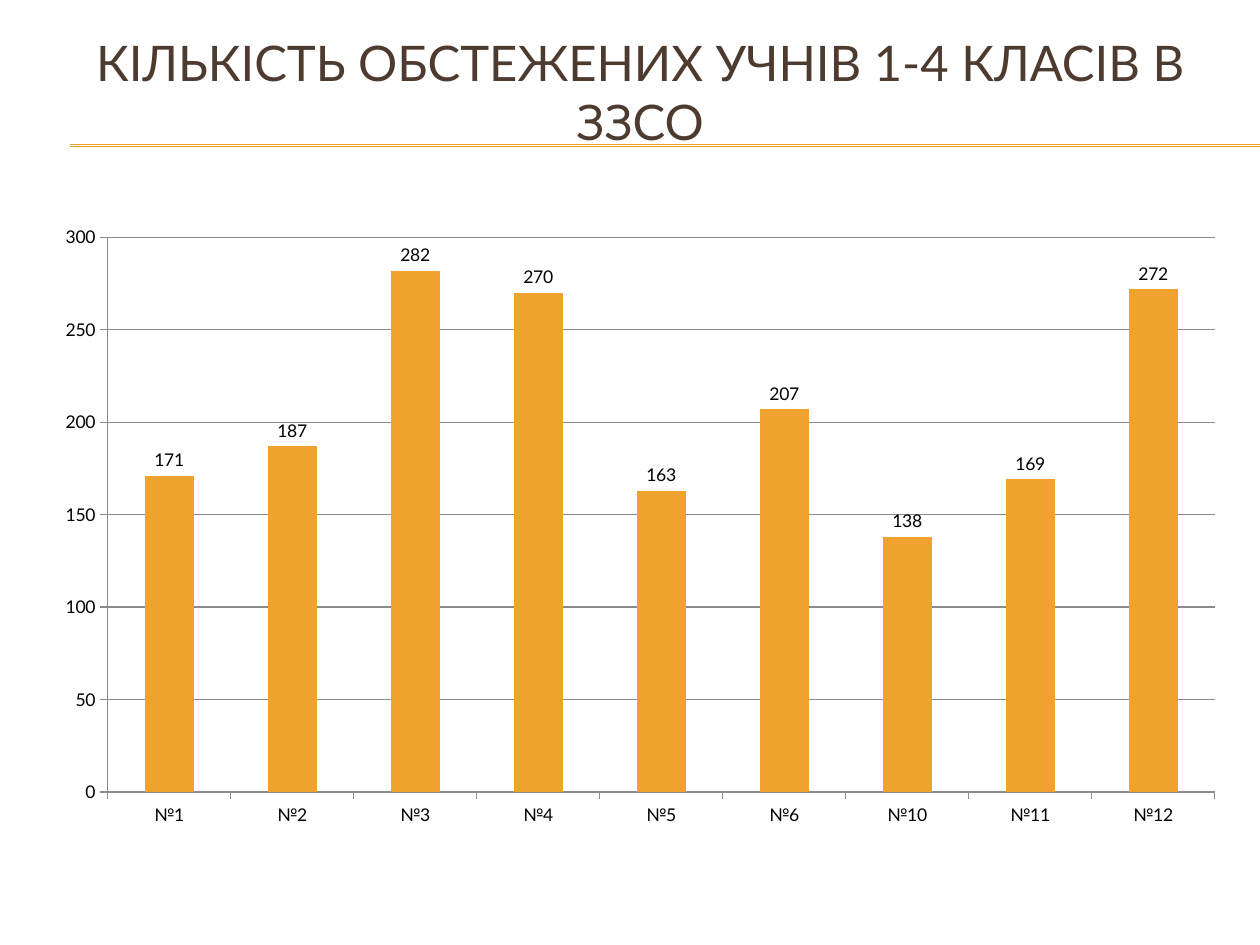
from dataclasses import dataclass
from lxml.etree import SubElement
from pptx import Presentation
from pptx.chart.data import CategoryChartData
from pptx.dml.color import RGBColor
from pptx.enum.chart import XL_CHART_TYPE, XL_LABEL_POSITION, XL_TICK_MARK
from pptx.enum.shapes import MSO_CONNECTOR
from pptx.enum.text import MSO_ANCHOR, PP_ALIGN
from pptx.oxml.ns import qn
from pptx.slide import Slide
from pptx.util import Cm, Pt

FONT = "Lato"
GOLD = "F0A22E"
BROWN = "4E3B30"
GREY = "8B8B8B"
BLACK = "000000"


@dataclass(frozen=True)
class School:
    """A school and its number of examined pupils."""
    name: str
    count: int


@dataclass(frozen=True)
class Rule:
    """A horizontal rule, in centimetres."""
    left: float
    right: float
    top: float


SCHOOLS = [
    School("№1", 171), School("№2", 187), School("№3", 282),
    School("№4", 270), School("№5", 163), School("№6", 207),
    School("№10", 138), School("№11", 169), School("№12", 272),
]
RULES = [Rule(1.42, 25.4, 2.92), Rule(1.42, 25.4, 2.95)]


def paint(target, code: str) -> None:
    """Give a fill a solid colour."""
    target.solid()
    target.fore_color.rgb = RGBColor.from_string(code)


def draw_rule(slide: Slide, rule: Rule) -> None:
    """Draw a thin gold rule without a shadow."""
    line = slide.shapes.add_connector(
        MSO_CONNECTOR.STRAIGHT, Cm(rule.left), Cm(rule.top),
        Cm(rule.right), Cm(rule.top))
    paint(line.line.fill, GOLD)
    line.line.width = Pt(0.75)
    SubElement(line._element.spPr, qn("a:effectLst"))


def draw_title(slide: Slide, text: str) -> None:
    """Write the centred heading."""
    box = slide.shapes.add_textbox(Cm(0.84), Cm(0.68), Cm(24.13), Cm(2.34))
    frame = box.text_frame
    frame.text = text
    frame.word_wrap = True
    frame.vertical_anchor = MSO_ANCHOR.MIDDLE
    para = frame.paragraphs[0]
    para.alignment = PP_ALIGN.CENTER
    font = para.runs[0].font
    font.name = FONT
    font.size = Pt(28)
    paint(font.fill, BROWN)


def draw_chart(slide: Slide, schools: list[School]) -> None:
    """Chart the number of pupils in each school."""
    data = CategoryChartData()
    data.categories = [school.name for school in schools]
    data.add_series("Series 1", [school.count for school in schools])
    chart = slide.shapes.add_chart(
        XL_CHART_TYPE.COLUMN_CLUSTERED, Cm(0.84), Cm(4.32),
        Cm(24.13), Cm(12.57), data).chart
    chart.has_legend = False
    chart.has_title = False
    chart.font.name = FONT
    chart.font.size = Pt(10)
    paint(chart.font.fill, BLACK)

    plot = chart.plots[0]
    plot.gap_width = 150
    plot.vary_by_categories = False
    paint(plot.series[0].format.fill, GOLD)
    plot.has_data_labels = True
    plot.data_labels.show_value = True
    plot.data_labels.position = XL_LABEL_POSITION.OUTSIDE_END

    scale = chart.value_axis
    scale.minimum_scale = 0
    scale.maximum_scale = 300
    scale.major_unit = 50
    scale.has_major_gridlines = True
    for axis in (chart.category_axis, scale):
        axis.major_tick_mark = XL_TICK_MARK.OUTSIDE
        axis.minor_tick_mark = XL_TICK_MARK.NONE
    for part in (chart.category_axis, scale, scale.major_gridlines):
        paint(part.format.line.fill, GREY)
        part.format.line.width = Pt(0.75)


def main() -> None:
    """Build and save the slide."""
    deck = Presentation()
    deck.slide_width = Cm(25.4)
    deck.slide_height = Cm(19.05)
    slide = deck.slides.add_slide(deck.slide_layouts[6])
    for rule in RULES:
        draw_rule(slide, rule)
    draw_title(slide, "КІЛЬКІСТЬ ОБСТЕЖЕНИХ УЧНІВ 1-4 КЛАСІВ В ЗЗСО")
    draw_chart(slide, SCHOOLS)
    deck.save("out.pptx")


if __name__ == "__main__":
    main()
